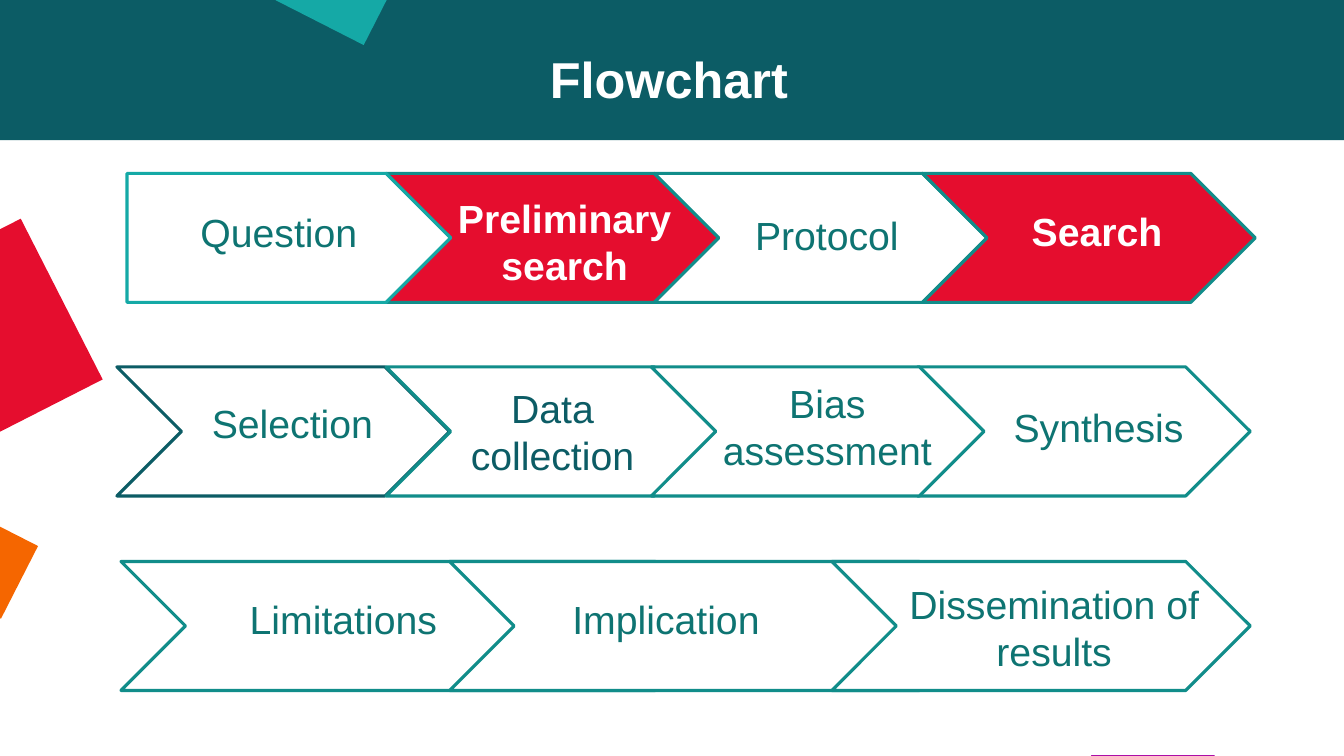
from pptx import Presentation
from pptx.dml.color import RGBColor
from pptx.enum.shapes import MSO_SHAPE
from pptx.enum.text import MSO_ANCHOR, PP_ALIGN
from pptx.util import Emu, Pt

WHITE = RGBColor(0xFF, 0xFF, 0xFF)
PETROL = RGBColor(0x0C, 0x5C, 0x65)
TEAL = RGBColor(0x11, 0x8D, 0x8A)
AQUA = RGBColor(0x15, 0xA9, 0xA6)
INK = RGBColor(0x0E, 0x74, 0x72)
RED = RGBColor(0xE5, 0x0D, 0x2E)
PURPLE = RGBColor(0xAD, 0x0D, 0xA6)
ORANGE = RGBColor(0xF5, 0x66, 0x00)

SCALE = 9144
STEP_HEIGHT = 128
ROW_ONE, ROW_TWO, ROW_THREE = 172, 364, 557


class FlowchartSlide:
    """Hold the style and the current slide, and draw its elements."""

    font = "Arial"
    label_size = 28
    outline = Pt(2.25)

    def __init__(self, deck):
        self.page = deck.slides.add_slide(deck.slide_layouts[6])

    def shape(self, kind, bounds, fill=None, line=None, rotation=0):
        """Draw one preset shape."""
        shape = self.page.shapes.add_shape(kind, *(Emu(n * SCALE) for n in bounds))
        shape.shadow.inherit = False
        shape.rotation = rotation
        if fill is None:
            shape.fill.background()
        else:
            shape.fill.solid()
            shape.fill.fore_color.rgb = fill
        if line is None:
            shape.line.fill.background()
        else:
            shape.line.color.rgb = line
            shape.line.width = self.outline
        return shape

    def block(self, bounds, fill, rotation=0):
        """Draw a plain rectangle."""
        self.shape(MSO_SHAPE.RECTANGLE, bounds, fill, rotation=rotation)

    def step(self, left, top, width=330, fill=WHITE, line=TEAL, kind=MSO_SHAPE.CHEVRON):
        """Draw one arrow of the flow."""
        arrow = self.shape(kind, (left, top, width, STEP_HEIGHT), fill, line)
        arrow.adjustments[0] = 0.5

    def label(self, text, bounds, color=INK, bold=False, size=label_size, spacing=None):
        """Write centred text, breaking it at each newline."""
        box = self.page.shapes.add_textbox(*(Emu(n * SCALE) for n in bounds))
        frame = box.text_frame
        frame.word_wrap = True
        frame.vertical_anchor = MSO_ANCHOR.TOP
        para = frame.paragraphs[0]
        para.alignment = PP_ALIGN.CENTER
        para.line_spacing = spacing
        for index, line in enumerate(text.split("\n")):
            if index:
                para.add_line_break()
            span = para.add_run()
            span.text = line
            span.font.name = self.font
            span.font.size = Pt(size)
            span.font.bold = bold
            span.font.color.rgb = color


def main():
    """Build the flowchart slide."""
    deck = Presentation()
    deck.slide_width, deck.slide_height = Emu(1333 * SCALE), Emu(750 * SCALE)
    slide = FlowchartSlide(deck)

    slide.block((0, 0, 1333, 139), PETROL)
    slide.block((-109, 248, 180, 179), RED, 333)
    slide.block((1089, 695, 109, 109), PURPLE, 27)
    slide.block((-61, 518, 85, 81), ORANGE, 27)
    slide.block((291, -73, 98, 101), AQUA, 27)
    slide.block((972, 649, 321, 100), WHITE)
    slide.label("Flowchart", (299, 50, 729, 41), WHITE, True, 36, 0.9)

    slide.step(383, ROW_ONE, fill=RED)
    slide.step(126, ROW_ONE, 321, None, AQUA, MSO_SHAPE.PENTAGON)
    slide.step(649, ROW_ONE)
    slide.step(915, ROW_ONE, fill=RED)
    slide.label("Question", (147, 202, 259, 57))
    slide.label("Preliminary search", (437, 188, 246, 57), WHITE, True)
    slide.label("Protocol", (714, 205, 212, 57))
    slide.label("Search", (984, 201, 208, 104), WHITE, True)

    slide.step(910, ROW_TWO)
    slide.step(116, ROW_TWO, line=PETROL)
    slide.step(383, ROW_TWO, fill=None)
    slide.step(646, ROW_TWO)
    slide.label("Selection", (173, 391, 234, 104))
    slide.label("Data\ncollection", (431, 376, 234, 57), PETROL)
    slide.label("Bias assessment", (705, 371, 231, 57))
    slide.label("Synthesis", (984, 395, 211, 104))

    for left, width in ((120, 594), (446, 530), (825, 415)):
        slide.step(left, ROW_THREE, width)
    slide.label("Limitations", (130, 586, 421, 104))
    slide.label("Implication", (450, 586, 421, 57))
    slide.label("Dissemination of results", (838, 571, 415, 57))

    deck.save("out.pptx")


if __name__ == "__main__":
    main()
